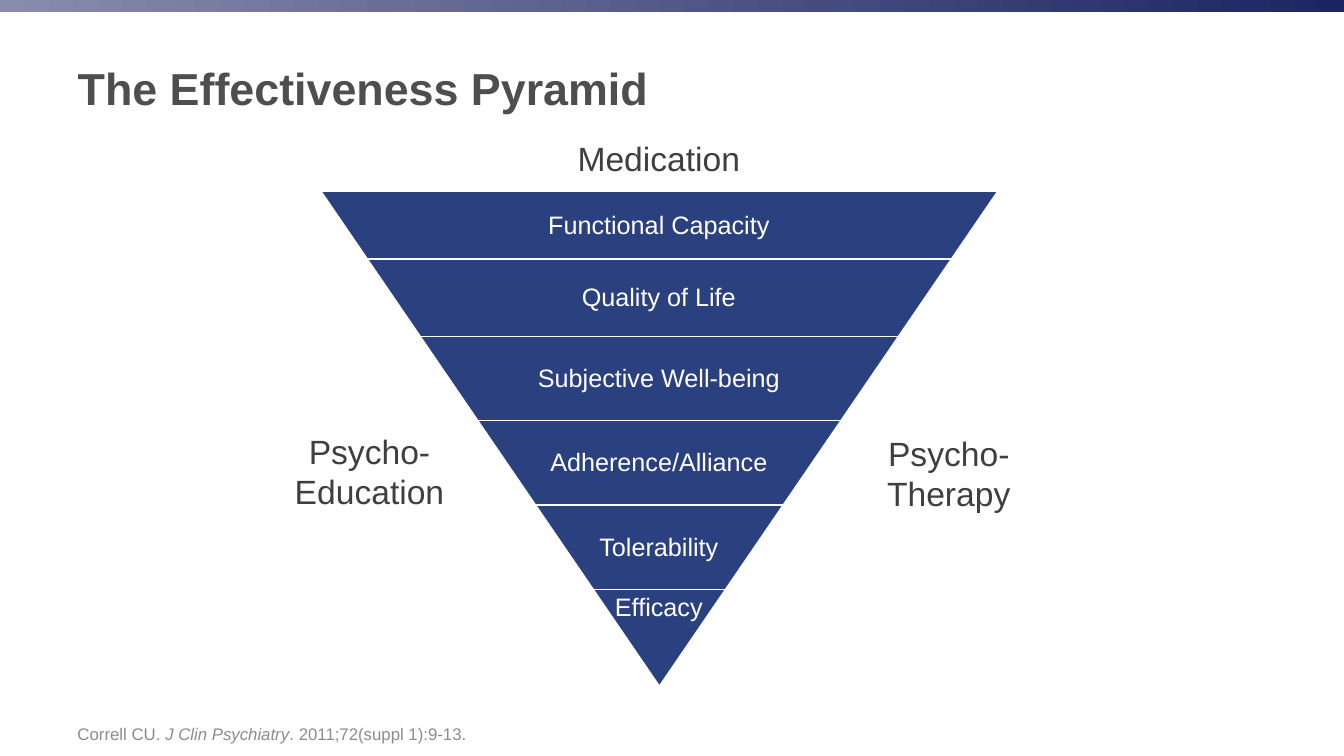
import dataclasses

import pptx
import pptx.dml.color
import pptx.enum.shapes
import pptx.enum.text
import pptx.oxml.ns
import pptx.util
from lxml import etree

SLIDE_WIDTH = pptx.util.Inches(13.33)
SLIDE_HEIGHT = pptx.util.Inches(7.5)
ALIGN = pptx.enum.text.PP_ALIGN
ANCHOR = pptx.enum.text.MSO_ANCHOR
SHAPE = pptx.enum.shapes.MSO_SHAPE


@dataclasses.dataclass(frozen=True)
class Theme:
    font: str = "Arial"
    white: str = "FFFFFF"
    navy: str = "2B407E"
    bar_start: str = "898CAD"
    bar_end: str = "1C2463"
    heading: str = "4D4E4D"
    label: str = "3F3F3F"
    citation: str = "8C8C8C"
    title_size: float = 32
    label_size: float = 24
    tier_size: float = 18
    citation_size: float = 12


THEME = Theme()

TIERS = [
    ("Functional Capacity", 27.07),
    ("Quality of Life", 36.53),
    ("Subjective Well-being", 47.2),
    ("Adherence/Alliance", 58.4),
    ("Tolerability", 69.6),
    ("Efficacy", 77.6),
]
DIVIDERS = [
    (24.98, 75.54, 34.27),
    (28.88, 71.72, 44.53),
    (33.91, 67.82, 55.6),
    (37.81, 63.32, 66.8),
    (42.24, 58.89, 78),
]
SUPPORTS = [
    ("Medication", (15.9, 17.73, 66.24, 6.27)),
    ("Psycho-\nEducation", (17.55, 55.6, 19.88, 13.33)),
    ("Psycho-\nTherapy", (63.32, 55.6, 14.55, 14)),
]
CITATION = [
    ("Correll CU. ", False),
    ("J Clin Psychiatry", True),
    (". 2011;72(suppl 1):9-13.", False),
]


def rgb(value):
    return pptx.dml.color.RGBColor.from_string(value)


def across(percent):
    return round(SLIDE_WIDTH * percent / 100)


def down(percent):
    return round(SLIDE_HEIGHT * percent / 100)


def area(left, top, width, height):
    return across(left), down(top), across(width), down(height)


def write(frame, text, *, size, color, bold=False, align=ALIGN.LEFT,
          anchor=ANCHOR.TOP, before=0):
    frame.word_wrap = True
    frame.auto_size = pptx.enum.text.MSO_AUTO_SIZE.NONE
    frame.vertical_anchor = anchor
    paragraph = frame.paragraphs[0]
    paragraph.alignment = align
    paragraph.space_before = pptx.util.Pt(before)
    pieces = [(text, False)] if isinstance(text, str) else text
    for piece, italic in pieces:
        for index, line in enumerate(piece.split("\n")):
            if index:
                paragraph.add_line_break()
            run = paragraph.add_run()
            run.text = line
            run.font.name = THEME.font
            run.font.size = pptx.util.Pt(size)
            run.font.bold = bold
            run.font.italic = italic
            run.font.color.rgb = rgb(color)


def add_text(slide, bounds, text, **text_format):
    write(slide.shapes.add_textbox(*area(*bounds)).text_frame, text, **text_format)


def add_top_bar(slide):
    bar = slide.shapes.add_shape(SHAPE.RECTANGLE, *area(0, 0, 100, 1.6))
    bar.shadow.inherit = False
    bar.line.fill.background()
    bar.fill.gradient()
    bar.fill.gradient_angle = 0
    for stop, position, color in zip(
            bar.fill.gradient_stops, (0, 1), (THEME.bar_start, THEME.bar_end)):
        stop.position = position
        stop.color.rgb = rgb(color)


def add_pyramid(slide):
    pyramid = slide.shapes.add_shape(
        SHAPE.ISOSCELES_TRIANGLE, *area(23.78, 25.2, 50.56, 65.73))
    pyramid.rotation = 180
    pyramid.shadow.inherit = False
    pyramid.fill.solid()
    pyramid.fill.fore_color.rgb = rgb(THEME.navy)
    pyramid.line.color.rgb = rgb(THEME.white)
    pyramid.line.width = pptx.util.Pt(2)


def add_divider(slide, left, right, level):
    divider = slide.shapes.add_connector(
        pptx.enum.shapes.MSO_CONNECTOR.STRAIGHT,
        across(left), down(level), across(right), down(level))
    divider.line.color.rgb = rgb(THEME.white)
    divider.line.width = pptx.util.Pt(1)
    etree.SubElement(divider.element.spPr, pptx.oxml.ns.qn("a:effectLst"))


def add_title(slide, text):
    title = slide.shapes.title
    title.left, title.top, title.width, title.height = area(5.03, 2.93, 88.15, 17.33)
    write(title.text_frame, text, size=THEME.title_size, color=THEME.heading,
          bold=True, anchor=ANCHOR.MIDDLE)


def main():
    deck = pptx.Presentation()
    deck.slide_width = SLIDE_WIDTH
    deck.slide_height = SLIDE_HEIGHT
    slide = deck.slides.add_slide(deck.slide_layouts.get_by_name("Title Only"))
    add_top_bar(slide)
    add_title(slide, "The Effectiveness Pyramid")
    add_pyramid(slide)
    for divider in DIVIDERS:
        add_divider(slide, *divider)
    for tier, top in TIERS:
        add_text(slide, (29.03, top, 39.98, 5.2), tier, size=THEME.tier_size,
                 color=THEME.white, align=ALIGN.CENTER)
    for support, bounds in SUPPORTS:
        add_text(slide, bounds, support, size=THEME.label_size, color=THEME.label,
                 align=ALIGN.CENTER, anchor=ANCHOR.MIDDLE, before=4.8)
    add_text(slide, (5.03, 92.67, 88.15, 6.4), CITATION, size=THEME.citation_size,
             color=THEME.citation, anchor=ANCHOR.BOTTOM)
    deck.save("out.pptx")


if __name__ == "__main__":
    main()
